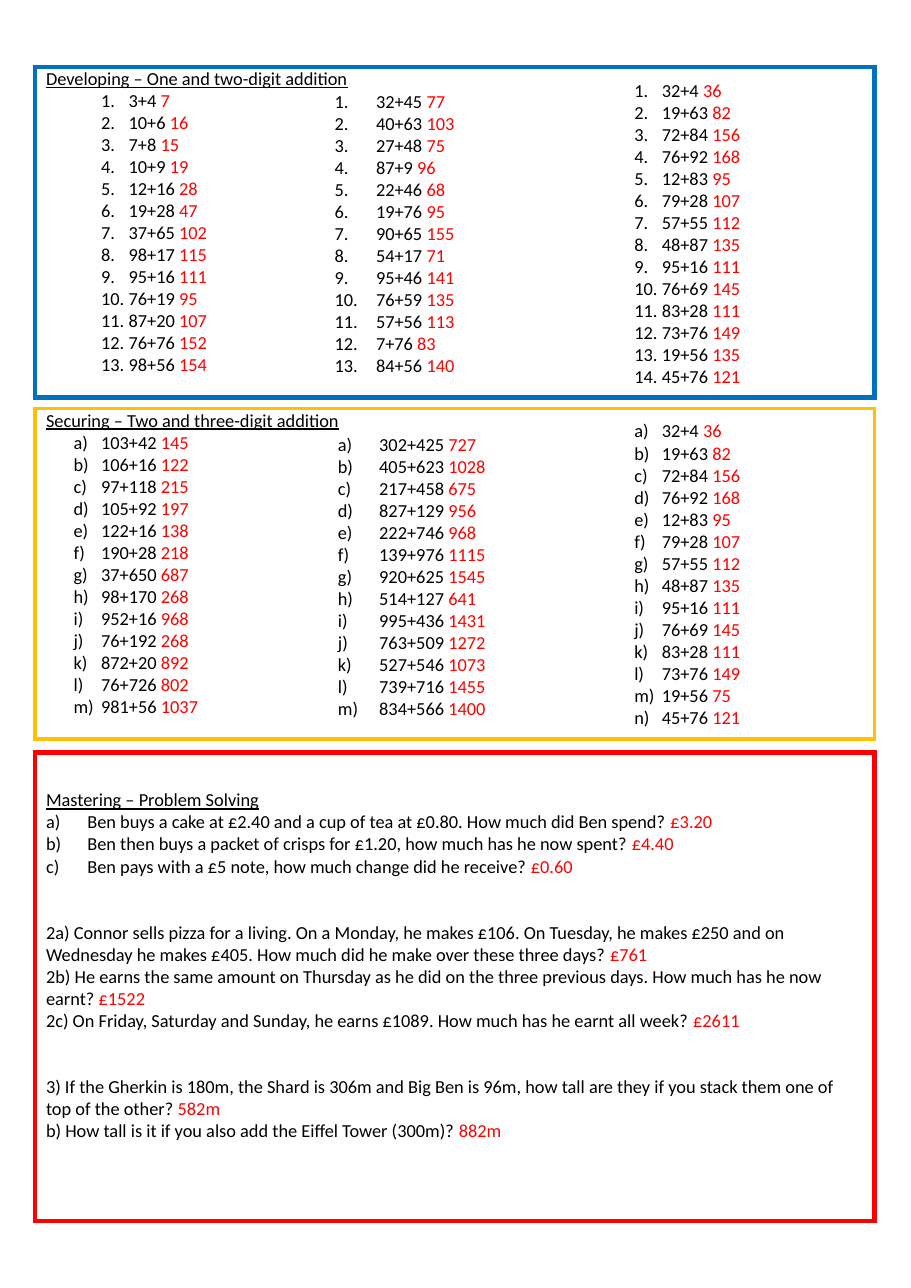
from pptx import Presentation
from pptx.dml.color import RGBColor
from pptx.enum.shapes import MSO_SHAPE as Preset
from pptx.enum.text import MSO_ANCHOR as Anchor, PP_ALIGN as Align
from pptx.oxml.ns import qn
from pptx.util import Pt
from lxml.etree import SubElement

COLORS = {"text": "000000", "answer": "FF0000", "developing": "0070C0",
          "securing": "FFC000", "mastering": "FF0000"}
FONT = {"name": "Calibri", "size": Pt(12)}
NUMBERS, LETTERS = "arabicPeriod", "alphaLcParenR"
BLOCK_GAP = 28.8
PANEL_LEFT, PANEL_WIDTH = 23, 548.6

# Each entry is a sum followed by its answer.
LAST_SUMS = ("32+4 36, 19+63 82, 72+84 156, 76+92 168, 12+83 95, 79+28 107, 57+55 112, "
             "48+87 135, 95+16 111, 76+69 145, 83+28 111, 73+76 149, 19+56 {}, 45+76 121")
DEVELOPING = [
    "3+4 7, 10+6 16, 7+8 15, 10+9 19, 12+16 28, 19+28 47, 37+65 102, 98+17 115, "
    "95+16 111, 76+19 95, 87+20 107, 76+76 152, 98+56 154",
    "32+45 77, 40+63 103, 27+48 75, 87+9 96, 22+46 68, 19+76 95, 90+65 155, 54+17 71, "
    "95+46 141, 76+59 135, 57+56 113, 7+76 83, 84+56 140",
    LAST_SUMS.format(135),
]
SECURING = [
    "103+42 145, 106+16 122, 97+118 215, 105+92 197, 122+16 138, 190+28 218, 37+650 687, "
    "98+170 268, 952+16 968, 76+192 268, 872+20 892, 76+726 802, 981+56 1037",
    "302+425 727, 405+623 1028, 217+458 675, 827+129 956, 222+746 968, 139+976 1115, "
    "920+625 1545, 514+127 641, 995+436 1431, 763+509 1272, 527+546 1073, 739+716 1455, "
    "834+566 1400",
    LAST_SUMS.format(75),
]
CAKE_SHOP = [
    ("Ben buys a cake at £2.40 and a cup of tea at £0.80. How much did Ben spend?", "£3.20"),
    ("Ben then buys a packet of crisps for £1.20, how much has he now spent?", "£4.40"),
    ("Ben pays with a £5 note, how much change did he receive?", "£0.60"),
]
PIZZA = [
    ("2a) Connor sells pizza for a living. On a Monday, he makes £106. On Tuesday, he makes "
     "£250 and on Wednesday he makes £405. How much did he make over these three days?", "£761"),
    ("2b) He earns the same amount on Thursday as he did on the three previous days. "
     "How much has he now earnt?", "£1522"),
    ("2c) On Friday, Saturday and Sunday, he earns £1089. How much has he earnt all week?",
     "£2611"),
]
TOWERS = [
    ("3) If the Gherkin is 180m, the Shard is 306m and Big Ben is 96m, how tall are they "
     "if you stack them one of top of the other?", "582m"),
    ("b) How tall is it if you also add the Eiffel Tower (300m)?", "882m"),
]


def rgb(name):
    return RGBColor.from_string(COLORS[name])


def new_para(frame):
    """Use the empty first paragraph before adding more."""
    first = frame.paragraphs[0]
    para = frame.add_paragraph() if first.runs else first
    para.alignment = Align.LEFT
    return para


def add_span(para, text, color="text", underline=False):
    span = para.add_run()
    span.text = text
    for key, value in {**FONT, "underline": underline}.items():
        setattr(span.font, key, value)
    span.font.color.rgb = rgb(color)


def number_para(para, scheme, margin, hang):
    props = para._p.get_or_add_pPr()
    props.set("marL", str(Pt(margin)))
    props.set("indent", str(-Pt(hang)))
    SubElement(props, qn("a:buAutoNum"), type=scheme)


def add_questions(frame, questions, scheme=None, margin=0, hang=0, gap=0):
    for index, (question, answer) in enumerate(questions):
        para = new_para(frame)
        if scheme:
            number_para(para, scheme, margin, hang)
        if gap and index == 0:
            para.space_before = Pt(gap)
        add_span(para, question + " ")
        add_span(para, answer, "answer")


def split_sums(sums):
    return [entry.split(" ") for entry in sums.split(", ")]


def add_panel(page, top, height, color, weight, title, inset=0):
    """Draw a framed panel with an underlined title and return its text frame."""
    panel = page.shapes.add_shape(Preset.RECTANGLE, Pt(PANEL_LEFT), Pt(top),
                                  Pt(PANEL_WIDTH), Pt(height))
    panel.shadow.inherit = False
    panel.fill.background()
    panel.line.color.rgb = rgb(color)
    panel.line.width = Pt(weight)
    SubElement(panel.line._get_or_add_ln(), qn("a:miter"), lim="800000")
    frame = panel.text_frame
    for key, value in {"word_wrap": True, "vertical_anchor": Anchor.TOP,
                       "margin_top": Pt(inset), "margin_bottom": 0}.items():
        setattr(frame, key, value)
    add_span(new_para(frame), title, underline=True)
    return frame


def add_column(page, left, top, width, height, sums, scheme, margin, hang):
    box = page.shapes.add_textbox(Pt(left), Pt(top), Pt(width), Pt(height))
    box.text_frame.word_wrap = True
    add_questions(box.text_frame, split_sums(sums), scheme, margin, hang)


def add_sums_panel(page, top, color, weight, title, columns, scheme, margin,
                   middle_offset, last_offset):
    """Fill a panel with three columns of sums; offsets are from its top left corner."""
    first, middle, last = columns
    frame = add_panel(page, top, 216, color, weight, title)
    add_questions(frame, split_sums(first), scheme, margin, 18)
    for (x, y), sums, indent, hang in [(middle_offset, middle, 27, 27),
                                       (last_offset, last, 36, 18)]:
        add_column(page, PANEL_LEFT + x, top + y, 122, 210, sums, scheme, indent, hang)


def add_problems_panel(page, top):
    frame = add_panel(page, top, 306, "mastering", 3, "Mastering – Problem Solving", 23.5)
    add_questions(frame, CAKE_SHOP, LETTERS, 27, 27)
    for problem in (PIZZA, TOWERS):
        add_questions(frame, problem, gap=BLOCK_GAP)


def main():
    deck = Presentation()
    deck.slide_width, deck.slide_height = Pt(595.44), Pt(841.68)
    page = deck.slides.add_slide(deck.slide_layouts[6])
    add_sums_panel(page, 43.9, "developing", 3, "Developing – One and two-digit addition",
                   DEVELOPING, NUMBERS, 54, (188.7, 11.5), (366.5, 4.3))
    add_sums_panel(page, 267.1, "securing", 2.25, "Securing – Two and three-digit addition",
                   SECURING, LETTERS, 36, (190.8, 12.3), (366.5, 3.6))
    add_problems_panel(page, 491.8)
    deck.save("out.pptx")


if __name__ == "__main__":
    main()
